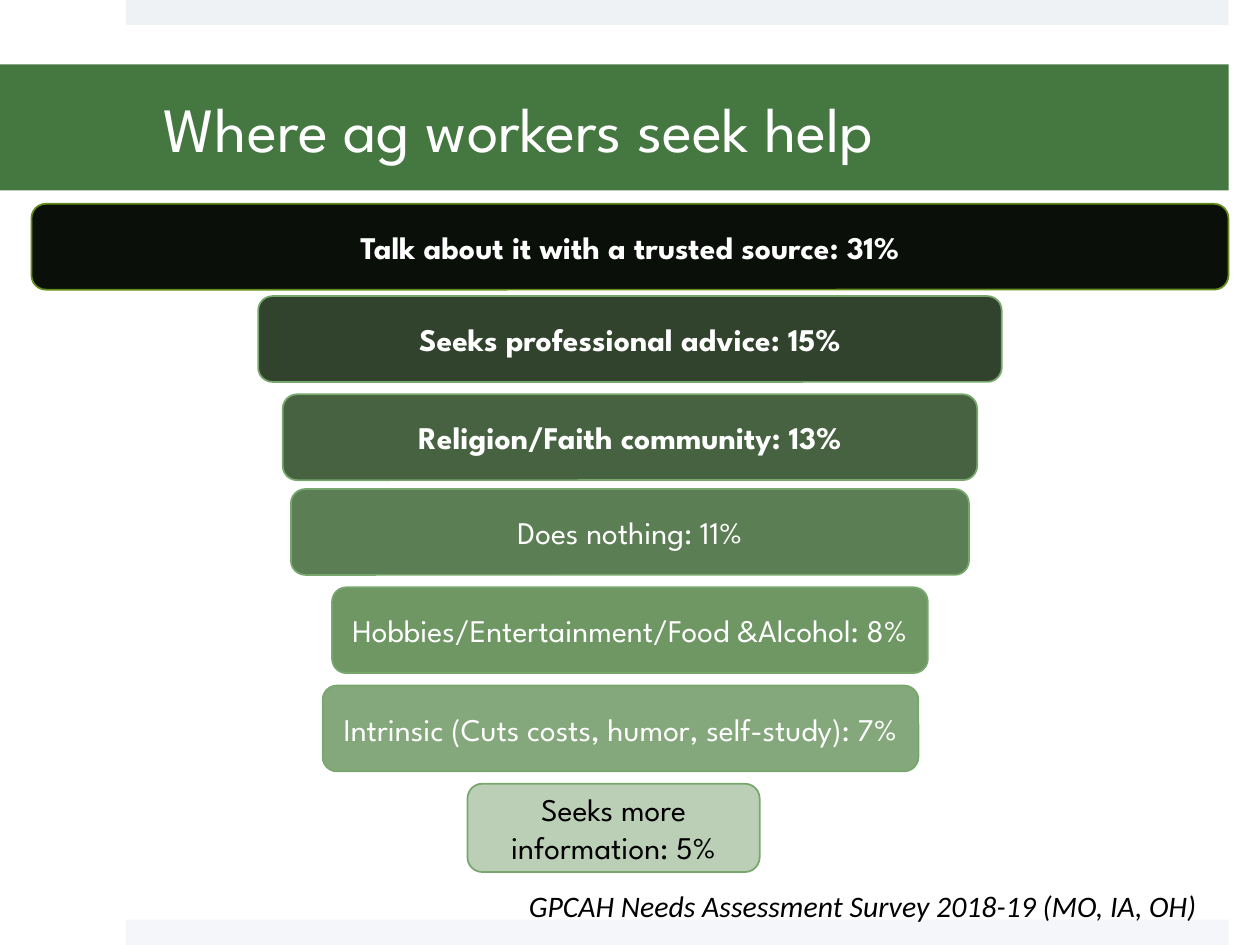
"""Build the slide on where agricultural workers seek help, as a funnel of bars."""
from dataclasses import dataclass

from pptx import Presentation
from pptx import util as u
from pptx.dml import color
from pptx.enum import shapes, text


@dataclass(frozen=True)
class Theme:
    heading_font: str = "League Spartan"
    note_font: str = "Calibri"
    title_size: int = 36
    bar_size: int = 18
    note_size: int = 17
    white: str = "FFFFFF"
    black: str = "000000"
    banner: str = "457741"
    top_strip: str = "EFF2F5"
    bottom_strip: str = "F4F6F9"
    outline: str = "78A76D"
    first_outline: str = "648C1C"
    greens: tuple = ("0A0F09", "31432D", "466240", "5C7E54",
                     "6E9764", "84A87C", "BBCEB6")


THEME = Theme()
CENTER = 12.7
BARS = [
    ("Talk about it with a trusted source: 31%", 4.11, 24.13, 0),
    ("Seeks professional advice: 15%", 5.97, 14.99, 0),
    ("Religion/Faith community: 13%", 7.95, 14, 0),
    ("Does nothing: 11%", 9.86, 13.67, 0),
    ("Hobbies/Entertainment/Food &Alcohol: 8%", 11.84, 12.01, 0),
    ("Intrinsic (Cuts costs, humor, self-study): 7%", 13.82, 12.01, -0.19),
    ("Seeks more information: 5%", 15.8, 5.89, -0.33),
]


def rgb(value):
    """Turn a hex string into a colour."""
    return color.RGBColor.from_string(value)


def add_box(s, kind, box, fill, line=None):
    """Add a flat filled shape, outlined if a line colour is given."""
    sp = s.shapes.add_shape(kind, *map(u.Cm, box))
    sp.shadow.inherit = False
    sp.fill.solid()
    sp.fill.fore_color.rgb = rgb(fill)
    if line:
        sp.line.color.rgb = rgb(line)
        sp.line.width = u.Pt(1)
    else:
        sp.line.fill.background()
    return sp


def write(sp, words, font, size, ink, align, bold=False, italic=False):
    """Write one run of text into a shape."""
    tf = sp.text_frame
    tf.word_wrap = True
    p = tf.paragraphs[0]
    p.alignment = align
    r = p.add_run()
    r.text = words
    r.font.name = font
    r.font.size = u.Pt(size)
    r.font.color.rgb = rgb(ink)
    r.font.bold = bold
    r.font.italic = italic
    return tf


def add_title(s):
    """Add the banner with the slide title."""
    sp = add_box(s, shapes.MSO_SHAPE.RECTANGLE, (0, 1.3, 24.77, 2.54), THEME.banner)
    tf = write(sp, "Where ag workers seek help", THEME.heading_font,
               THEME.title_size, THEME.white, text.PP_ALIGN.LEFT)
    tf.vertical_anchor = text.MSO_ANCHOR.MIDDLE
    tf.margin_left, tf.margin_right = u.Cm(3.3), u.Cm(0.76)


def add_funnel(s):
    """Add the bars, the leading three in bold and the last with dark text."""
    last = len(BARS) - 1
    for i, (words, top, width, shift) in enumerate(BARS):
        box = (CENTER + shift - width / 2, top, width, 1.78 if i == last else 1.73)
        line = THEME.outline if i else THEME.first_outline
        sp = add_box(s, shapes.MSO_SHAPE.ROUNDED_RECTANGLE, box, THEME.greens[i], line)
        ink = THEME.black if i == last else THEME.white
        tf = write(sp, words, THEME.heading_font, THEME.bar_size, ink,
                   text.PP_ALIGN.CENTER, bold=i < 3)
        tf.vertical_anchor = text.MSO_ANCHOR.MIDDLE


def add_note(s):
    """Add the survey source line."""
    sp = s.shapes.add_textbox(*map(u.Cm, (10.41, 17.78, 14, 0.97)))
    write(sp, "GPCAH Needs Assessment Survey 2018-19 (MO, IA, OH)", THEME.note_font,
          THEME.note_size, THEME.black, text.PP_ALIGN.LEFT, italic=True)


def main():
    """Build and save the slide."""
    prs = Presentation()
    prs.slide_width, prs.slide_height = u.Cm(25.4), u.Cm(19.05)
    s = prs.slides.add_slide(prs.slide_layouts[6])
    for top, fill in ((0, THEME.top_strip), (18.54, THEME.bottom_strip)):
        add_box(s, shapes.MSO_SHAPE.RECTANGLE, (2.54, top, 22.23, 0.51), fill)
    add_title(s)
    add_note(s)
    add_funnel(s)
    prs.save("out.pptx")


if __name__ == "__main__":
    main()
